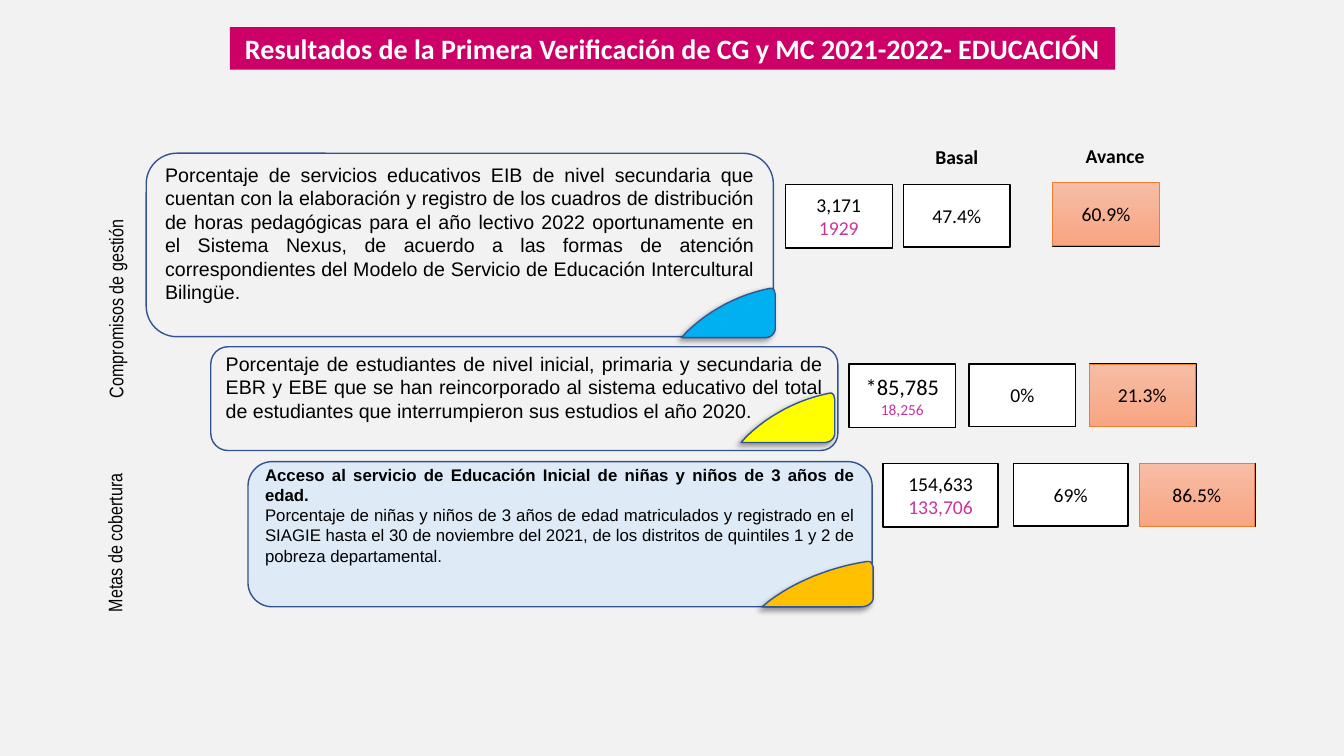
from dataclasses import dataclass

from lxml import etree
from pptx import Presentation
from pptx import util as u
from pptx.dml.color import RGBColor
from pptx.enum import shapes, text
from pptx.oxml.ns import qn

PX = 9144  # EMU per px, 100 px to the inch

BACKGROUND = RGBColor(0xF2, 0xF2, 0xF2)
BLACK = RGBColor(0, 0, 0)
WHITE = RGBColor(0xFF, 0xFF, 0xFF)
NAVY = RGBColor(0x32, 0x54, 0x91)
MAGENTA = RGBColor(0xCC, 0x00, 0x66)
PINK = RGBColor(0xCC, 0x33, 0x99)
PALE_BLUE = RGBColor(0xDE, 0xEB, 0xF7)
SKY = RGBColor(0x00, 0xB0, 0xF0)
YELLOW = RGBColor(0xFF, 0xFF, 0x00)
AMBER = RGBColor(0xFF, 0xC0, 0x00)
ORANGE = RGBColor(0xED, 0x7D, 0x31)
SALMON_TOP = RGBColor(0xF7, 0xBD, 0xA5)
SALMON_BOTTOM = RGBColor(0xF8, 0xA5, 0x82)

CENTER, JUSTIFY = text.PP_ALIGN.CENTER, text.PP_ALIGN.JUSTIFY

# Corner fold on a 930 x 490 grid: points of straight lines, six numbers for a curve
FOLD_START = (900, 0)
FOLD_STEPS = [(920, 20), (920, 30, 930, 50, 930, 65), (930, 400),
              (930, 445, 885, 490, 830, 490), (0, 490), (60, 425),
              (280, 215, 560, 65, 880, 0)]


@dataclass(frozen=True)
class Box:
    left: int
    top: int
    width: int
    height: int

    def emu(self) -> list[int]:
        return [PX * n for n in (self.left, self.top, self.width, self.height)]


@dataclass(frozen=True)
class Line:
    words: str
    size: int = 14
    color: RGBColor = BLACK
    bold: bool = False
    font: str = "Calibri"


@dataclass(frozen=True)
class Indicator:
    panel: Box
    fill: RGBColor
    bottom_inset: int
    wording: list[Line]
    fold: Box
    fold_color: RGBColor
    lefts: tuple[int, int, int]
    top: int
    cell_width: int
    counts: list[Line]
    baseline: str
    progress: str
    progress_top: int
    backing: Box


@dataclass(frozen=True)
class Caption:
    box: Box
    line: Line
    vertical: bool = False


INDICATORS = [
    Indicator(
        Box(145, 152, 622, 182), BACKGROUND, 28,
        [Line("Porcentaje de servicios educativos EIB de nivel secundaria que cuentan con la "
              "elaboración y registro de los cuadros de distribución de horas pedagógicas para "
              "el año lectivo 2022 oportunamente en el Sistema Nexus, de acuerdo a las formas "
              "de atención correspondientes del Modelo de Servicio de Educación Intercultural "
              "Bilingüe.", font="Arial")],
        Box(676, 286, 93, 49), SKY, (779, 896, 1044), 183, 106,
        [Line("3,171"), Line("1929", color=PINK)], "47.4%", "60.9%", 181,
        Box(1044, 182, 106, 62)),
    Indicator(
        Box(209, 344, 622, 103), BACKGROUND, 28,
        [Line("Porcentaje de estudiantes de nivel inicial, primaria y secundaria de EBR y EBE "
              "que se han reincorporado al sistema educativo del total de estudiantes que "
              "interrumpieron sus estudios el año 2020.", font="Arial")],
        Box(735, 390, 93, 49), YELLOW, (842, 961, 1080), 361, 106,
        [Line("*85,785", 16), Line("18,256", 11, PINK)], "0%", "21.3%", 361,
        Box(1081, 361, 106, 62)),
    Indicator(
        Box(246, 458, 619, 144), PALE_BLUE, 43,
        [Line("Acceso al servicio de Educación Inicial de niñas y niños de 3 años de edad.",
              12, bold=True, font="Arial"),
         Line("Porcentaje de niñas y niños de 3 años de edad matriculados y registrado en el "
              "SIAGIE hasta el 30 de noviembre del 2021, de los distritos de quintiles 1 y "
              "2 de pobreza departamental.", 12, font="Arial")],
        Box(756, 557, 110, 45), AMBER, (876, 1005, 1130), 460, 114,
        [Line("154,633"), Line("133,706", color=PINK)], "69%", "86.5%", 460,
        Box(1131, 460, 114, 62)),
]

CAPTIONS = [
    Caption(Box(858, 139, 182, 34), Line("Basal", bold=True)),
    Caption(Box(1015, 138, 182, 34), Line("Avance", bold=True)),
    Caption(Box(98, 135, 44, 343), Line("Compromisos de gestión", font="Arial Narrow"), True),
    Caption(Box(97, 405, 44, 267), Line("Metas de cobertura", font="Arial Narrow"), True),
]


def write_lines(shape, lines: list[Line], alignment=CENTER,
                anchor=text.MSO_ANCHOR.MIDDLE, **margins: int) -> None:
    frame = shape.text_frame
    settings = {"word_wrap": True, "auto_size": text.MSO_AUTO_SIZE.NONE,
                "vertical_anchor": anchor}
    settings |= {f"margin_{side}": PX * inset for side, inset in margins.items()}
    for name, value in settings.items():
        setattr(frame, name, value)
    for index, line in enumerate(lines):
        paragraph = frame.add_paragraph() if index else frame.paragraphs[0]
        paragraph.alignment = alignment
        run = paragraph.add_run()
        run.text = line.words
        run.font.color.rgb = line.color
        font_values = {"name": line.font, "size": u.Pt(line.size), "bold": line.bold}
        for name, value in font_values.items():
            setattr(run.font, name, value)


def paint(shape, fill: RGBColor, outline: RGBColor, width: float = 1) -> None:
    shape.shadow.inherit = False
    shape.fill.solid()
    shape.fill.fore_color.rgb = fill
    shape.line.color.rgb = outline
    shape.line.width = u.Pt(width)


def add_box(slide, box: Box, fill: RGBColor = WHITE, outline: RGBColor = BLACK,
            width: float = 1, kind=shapes.MSO_SHAPE.RECTANGLE):
    shape = slide.shapes.add_shape(kind, *box.emu())
    paint(shape, fill, outline, width)
    return shape


def curve_points(start, curve, steps: int = 12) -> list[tuple[float, float]]:
    """Return points along a cubic Bézier curve."""
    corners = [start, curve[0:2], curve[2:4], curve[4:6]]
    points = []
    for step in range(1, steps + 1):
        t = step / steps
        weights = ((1 - t) ** 3, 3 * t * (1 - t) ** 2, 3 * t * t * (1 - t), t ** 3)
        points.append(tuple(sum(w * c[axis] for w, c in zip(weights, corners))
                            for axis in (0, 1)))
    return points


def add_fold(slide, box: Box, color: RGBColor) -> None:
    left, top, width, height = box.emu()
    points = [FOLD_START]
    for step in FOLD_STEPS:
        points += [step] if len(step) == 2 else curve_points(points[-1], step)
    builder = slide.shapes.build_freeform(*FOLD_START, scale=(width / 930, height / 490))
    builder.add_line_segments(points[1:], close=True)
    shape = builder.convert_to_shape(left, top)
    paint(shape, color, NAVY)
    effects = shape.element.spPr.find(qn("a:effectLst"))
    shadow = etree.SubElement(effects, qn("a:outerShdw"), blurRad=str(u.Pt(4)),
                              dist=str(u.Pt(3)), dir=str(135 * 60000), rotWithShape="0")
    shade = etree.SubElement(shadow, qn("a:srgbClr"), val=str(BLACK))
    etree.SubElement(shade, qn("a:alpha"), val="40000")


def add_progress(slide, box: Box, words: str) -> None:
    shape = add_box(slide, box, SALMON_TOP, ORANGE, 0.5)
    shape.fill.gradient()
    shape.fill.gradient_angle = 270
    for stop, color in zip(shape.fill.gradient_stops, (SALMON_TOP, SALMON_BOTTOM)):
        stop.color.rgb = color
    write_lines(shape, [Line(words)])


def add_indicator(slide, item: Indicator) -> None:
    panel = add_box(slide, item.panel, item.fill, NAVY,
                    kind=shapes.MSO_SHAPE.ROUNDED_RECTANGLE)
    write_lines(panel, item.wording, JUSTIFY, top=5, bottom=item.bottom_inset)
    add_fold(slide, item.fold, item.fold_color)
    counts_left, baseline_left, progress_left = item.lefts
    counts = add_box(slide, Box(counts_left, item.top, item.cell_width, 63))
    write_lines(counts, item.counts)
    baseline = add_box(slide, Box(baseline_left, item.top, item.cell_width, 62))
    write_lines(baseline, [Line(item.baseline)])
    add_box(slide, item.backing)
    add_progress(slide, Box(progress_left, item.progress_top, item.cell_width, 62),
                 item.progress)


def add_caption(slide, caption: Caption) -> None:
    shape = slide.shapes.add_textbox(*caption.box.emu())
    write_lines(shape, [caption.line], anchor=text.MSO_ANCHOR.TOP)
    if caption.vertical:
        shape.element.txBody.find(qn("a:bodyPr")).set("vert", "vert270")


def add_title(slide) -> None:
    title = slide.shapes.title
    for name, value in zip(("left", "top", "width", "height"), Box(228, 27, 878, 42).emu()):
        setattr(title, name, value)
    title.fill.solid()
    title.fill.fore_color.rgb = MAGENTA
    write_lines(title, [Line("Resultados de la Primera Verificación de CG y MC 2021-2022- "
                             "EDUCACIÓN", 20, WHITE, True)])


def main() -> None:
    presentation = Presentation()
    presentation.slide_width, presentation.slide_height = 1333 * PX, 750 * PX
    slide = presentation.slides.add_slide(presentation.slide_layouts[5])
    slide.background.fill.solid()
    slide.background.fill.fore_color.rgb = BACKGROUND
    add_title(slide)
    for item in INDICATORS:
        add_indicator(slide, item)
    for caption in CAPTIONS:
        add_caption(slide, caption)
    presentation.save("out.pptx")


if __name__ == "__main__":
    main()
